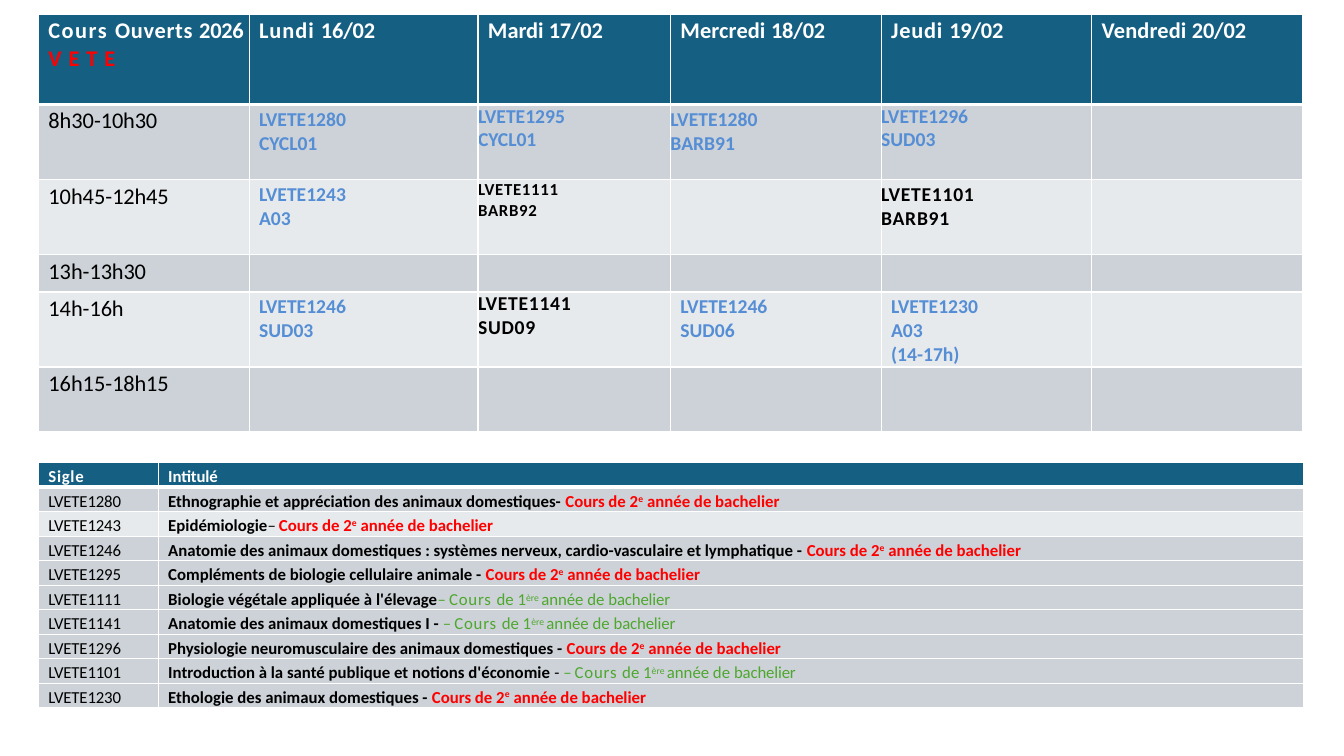
from lxml.etree import SubElement
from pptx import Presentation
from pptx.dml.color import RGBColor
from pptx.oxml import parse_xml
from pptx.oxml.ns import nsdecls
from pptx.util import Cm, Pt

WHITE, BLACK, RED = "FFFFFF", "000000", "FF0000"
BLUE, GREEN = "558ED5", "4EA72D"
HEADER, DARK_BAND, LIGHT_BAND = "155F82", "CCD2D7", "E7EAEC"
INDENT = 0.25


def rgb(value):
    return RGBColor.from_string(value)


def fill_cell(cell, band, runs, size, left, top, borders):
    """Runs are (text, colour, bold, spacing, baseline); borders run left, right, top, bottom."""
    cell.margin_left, cell.margin_top = Cm(left), Cm(top)
    cell.margin_right = cell.margin_bottom = 0
    cell.fill.solid()
    cell.fill.fore_color.rgb = rgb(band)
    properties = cell._tc.get_or_add_tcPr()
    for position, (side, width) in enumerate(zip("LRTB", borders)):
        properties.insert(position, parse_xml(
            f'<a:ln{side} {nsdecls("a")} w="{Pt(width)}"><a:solidFill>'
            f'<a:srgbClr val="{WHITE}"/></a:solidFill></a:ln{side}>'))
    paragraph = cell.text_frame.paragraphs[0]
    paragraph.font.size, paragraph.font.name = Pt(size), "Calibri"
    for text, colour, bold, spacing, baseline in runs:
        for number, line in enumerate(text.split("\n")):
            if number:
                paragraph.add_line_break()
            run = paragraph.add_run()
            run.text = line
            run.font.bold = bold
            run.font.color.rgb = rgb(colour)
            run_properties = run._r.get_or_add_rPr()
            run_properties.set("spc", str(round(spacing * 100)))
            if baseline:
                run_properties.set("baseline", str(baseline * 1000))


prs = Presentation()
prs.slide_width, prs.slide_height = Cm(33.87), Cm(19.05)
slide = prs.slides.add_slide(prs.slide_layouts[6])

# Timetable content
days = [[("Cours ", WHITE, True, 1.1, 0), ("Ouverts ", WHITE, True, 0.5, 0),
         ("2026 ", WHITE, True, -0.2, 0), ("VETE", RED, True, 5, 0)]]
for day, date, spacing in [("Lundi ", "16/02", 0.7), ("Mardi ", "17/02", 0),
                           ("Mercredi ", "18/02", 0.1), ("Jeudi ", "19/02", 0.6),
                           ("Vendredi ", "20/02", 0.1)]:
    days.append([(day, WHITE, True, spacing, 0), (date, WHITE, True, -0.1, 0)])

slots = [("8h30-", "10h30"), ("10h45-", "12h45"), ("13h-", "13h30"),
         ("14h-", "16h"), ("16h15-", "18h15")]

# (slot, day): text, colour, size, left margin, top margin
lessons = {
    (1, 1): ("LVETE1280\nCYCL01", BLUE, 14, INDENT, 0.08),
    (1, 2): ("LVETE1295\nCYCL01", BLUE, 14, 0, 0),
    (1, 3): ("LVETE1280\nBARB91", BLUE, 14, 0, 0.08),
    (1, 4): ("LVETE1296\nSUD03", BLUE, 14, 0, 0),
    (2, 1): ("LVETE1243\nA03", BLUE, 14, INDENT, 0.08),
    (2, 2): ("LVETE1111\nBARB92", BLACK, 12, 0, 0),
    (2, 4): ("LVETE1101\nBARB91", BLACK, 14, 0, 0.08),
    (4, 1): ("LVETE1246\nSUD03", BLUE, 14, INDENT, 0.08),
    (4, 2): ("LVETE1141\nSUD09", BLACK, 14, 0, 0),
    (4, 3): ("LVETE1246\nSUD06", BLUE, 14, INDENT, 0.08),
    (4, 4): ("LVETE1230\nA03 \n(14-17h)", BLUE, 14, INDENT, 0.08),
}

timetable_rows = []
for row in range(len(slots) + 1):
    cells = []
    for column in range(len(days)):
        runs, size, left, top = [], 14, INDENT, 0.08
        if row == 0:
            runs, size = days[column], 16
        elif column == 0:
            start, end = slots[row - 1]
            runs, size = [(start, BLACK, False, 0, 0), (end, BLACK, False, -0.1, 0)], 16
        elif (row, column) in lessons:
            text, colour, size, left, top = lessons[row, column]
            runs = [(text, colour, True, 0.5 if colour == BLACK else 0, 0)]
        cells.append((runs, size, left, top))
    timetable_rows.append(cells)

# Course list content
second_year = [("Cours de 2", RED, True, 0, 0), ("e", RED, True, 0, 30),
               (" année de bachelier", RED, True, 0, 0)]
first_year = [("– ", GREEN, False, -0.6, 0), ("Cours ", GREEN, False, 0.6, 0),
              ("de 1", GREEN, False, 0, 0), ("ère ", GREEN, False, 0, 24),
              ("année de ", GREEN, False, 0, 0), ("bachelier", GREEN, False, -0.1, 0)]
courses = [
    ("LVETE1280", "Ethnographie et appréciation des animaux domestiques- ", "", second_year),
    ("LVETE1243", "Epidémiologie", "– ", second_year),
    ("LVETE1246", "Anatomie des animaux domestiques : systèmes nerveux, "
                  "cardio-vasculaire et lymphatique - ", "", second_year),
    ("LVETE1295", "Compléments de biologie cellulaire animale - ", "", second_year),
    ("LVETE1111", "Biologie végétale appliquée à l'élevage", "", first_year),
    ("LVETE1141", "Anatomie des animaux domestiques I - ", "", first_year),
    ("LVETE1296", "Physiologie neuromusculaire des animaux domestiques - ", "", second_year),
    ("LVETE1101", "Introduction à la santé publique et notions d'économie ", "- ", first_year),
    ("LVETE1230", "Ethologie des animaux domestiques - ", "", second_year),
]
course_rows = [[([("Sigle", WHITE, True, 0.5, 0)], 12, INDENT, 0.1),
                ([("Intitulé", WHITE, True, -0.1, 0)], 12, INDENT, 0.1)]]
for code, title, dash, year in courses:
    heading = [(title, BLACK, True, 0, 0)]
    if dash:
        heading.append((dash, BLACK, False, -0.6 if dash == "– " else 0, 0))
    course_rows.append([([(code, BLACK, False, -0.1, 0)], 12, INDENT, 0.1),
                        (heading + year, 12, INDENT, 0.1)])

# Both tables: top, column widths, row heights, light rows, content
tables = [
    (0.36, [5.31, 5.77, 4.85, 5.31, 5.31, 5.31], [2.27, 1.9, 1.89, 0.94, 1.89, 1.62],
     {2, 4}, timetable_rows),
    (11.66, [3.02, 28.85], [0.59] + [0.61] * len(courses), {2}, course_rows),
]
for top, widths, heights, light_rows, rows in tables:
    grid = slide.shapes.add_table(len(heights), len(widths), Cm(0.97), Cm(top),
                                  Cm(sum(widths)), Cm(sum(heights))).table
    for column, width in zip(grid.columns, widths):
        column.width = Cm(width)
    for row, height in zip(grid.rows, heights):
        row.height = Cm(height)
    for r, cells in enumerate(rows):
        band = HEADER if r == 0 else LIGHT_BAND if r in light_rows else DARK_BAND
        borders = (1, 1, 3 if r == 1 else 1, 3 if r == 0 else 1)
        for c, (runs, size, left, cell_top) in enumerate(cells):
            fill_cell(grid.cell(r, c), band, runs, size, left, cell_top, borders)

prs.save("out.pptx")
